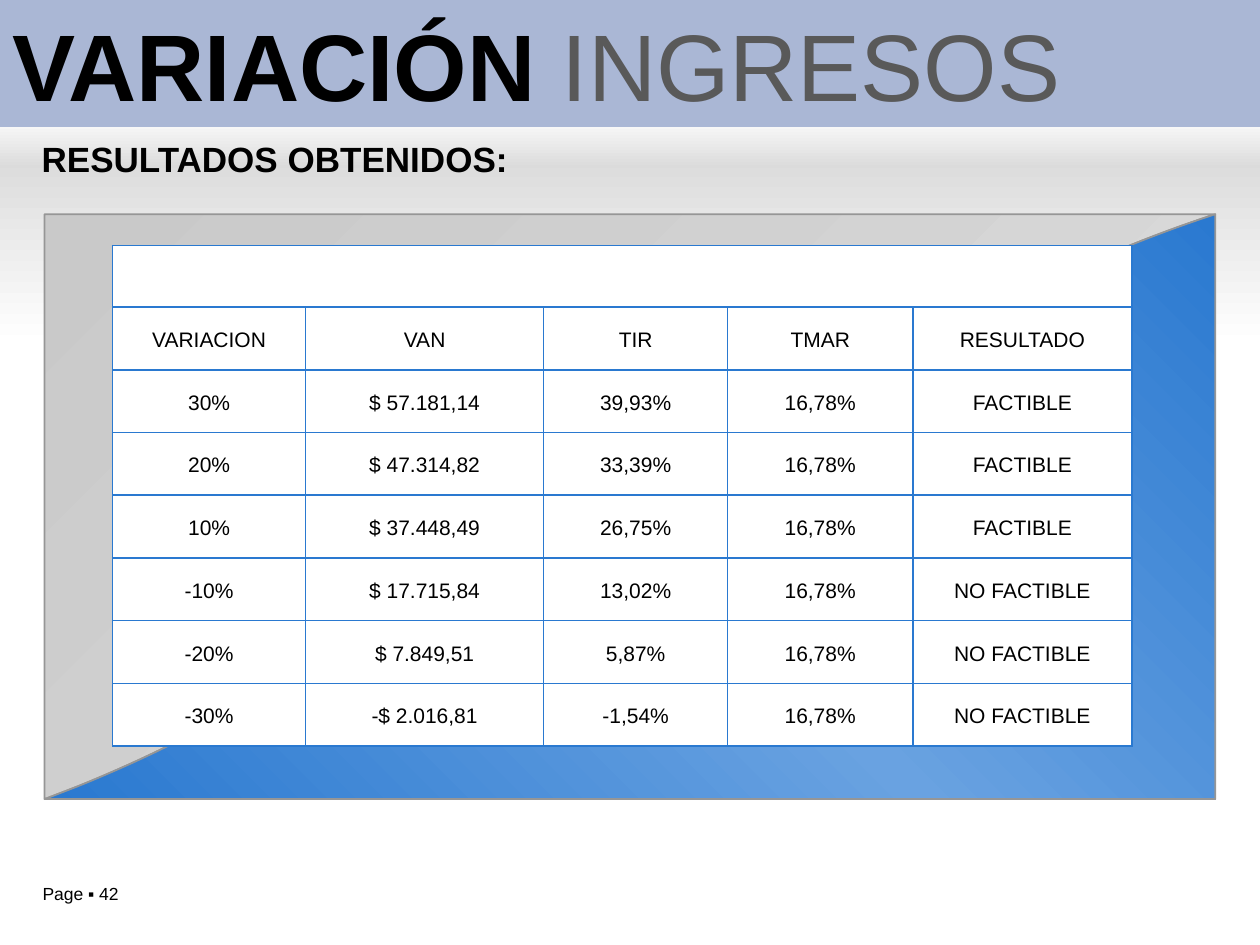
from lxml.etree import SubElement
from pptx import Presentation
from pptx.dml.color import RGBColor
from pptx.enum.shapes import MSO_SHAPE as Preset
from pptx.enum.text import MSO_ANCHOR as Anchor, PP_ALIGN as Align
from pptx.oxml.ns import qn
from pptx.util import Cm, Pt

COLORS = {
    "black": "000000", "white": "FFFFFF", "title band": "AAB7D5", "title gray": "595959",
    "floor": "DDDDDD", "wall": "DBDBDB", "piece dark": "C9C9C9", "piece light": "DEDEDE",
    "piece line": "969696", "blue": "2A79D0", "light blue": "69A2E1",
}


def add_runs(frame, runs, margin_x=0.25, margin_y=0.13):
    frame.word_wrap = True
    frame.vertical_anchor = Anchor.MIDDLE
    frame.margin_left = frame.margin_right = Cm(margin_x)
    frame.margin_top = frame.margin_bottom = Cm(margin_y)
    paragraph = frame.paragraphs[0]
    paragraph.alignment = Align.LEFT
    for text, size, color, bold in runs:
        run = paragraph.add_run()
        run.text = text
        run.font.name = "Arial"
        run.font.size = Pt(size)
        run.font.bold = bold
        run.font.color.rgb = RGBColor.from_string(COLORS[color])


def fill_gradient(shape, names, angle):
    shape.shadow.inherit = False
    shape.fill.gradient()
    gradient = shape._element.spPr.find(qn("a:gradFill"))
    stops = gradient.find(qn("a:gsLst"))
    for stop in list(stops):
        stops.remove(stop)
    for index, name in enumerate(names):
        position = 100000 * index // (len(names) - 1)
        stop = SubElement(stops, qn("a:gs"), pos=str(position))
        SubElement(stop, qn("a:srgbClr"), val=COLORS[name])
    gradient.find(qn("a:lin")).set("ang", str(angle * 60000))


presentation = Presentation()
presentation.slide_width = Cm(25.4)
presentation.slide_height = Cm(19.05)
slide = presentation.slides.add_slide(presentation.slide_layouts[6])
shapes = slide.shapes

page_box = shapes.add_textbox(Cm(0.61), Cm(17.66), Cm(3.73), Cm(0.69))
add_runs(page_box.text_frame, [("Page ▪ 42", 10, "black", False)])

backdrop_group = shapes.add_group_shape()
for top, height, names in [
    (3.35, 3.61, ("floor", "white")),
    (2.29, 1.09, ("white", "wall")),
]:
    backdrop = backdrop_group.shapes.add_shape(
        Preset.RECTANGLE, 0, Cm(top), Cm(25.4), Cm(height)
    )
    fill_gradient(backdrop, names, 90)
    backdrop.line.fill.background()

subtitle = shapes.add_textbox(Cm(0.84), Cm(2.77), Cm(10.49), Cm(0.86))
add_runs(subtitle.text_frame, [("RESULTADOS OBTENIDOS:", 20, "black", True)], 0, 0)

UNIT = Cm(2.54) / 100
LEFT, TOP, RIGHT, BOTTOM = 35, 170, 965, 635
JIGSAW_CURVES = [
    (35, 635, 61, 625, 61, 625), (98, 610, 166, 580, 189, 558),
    (192, 555, 209, 540, 233, 528), (257, 516, 279, 511, 284, 510),
    (299, 507, 311, 516, 313, 520), (318, 526, 318, 536, 318, 540),
    (318, 546, 320, 553, 322, 559), (333, 580, 359, 588, 380, 577),
    (400, 567, 409, 542, 398, 521), (395, 515, 390, 510, 385, 506),
    (382, 504, 374, 498, 372, 491), (371, 486, 370, 473, 381, 462),
    (385, 459, 402, 444, 426, 431), (450, 419, 473, 414, 477, 414),
    (477, 414, 503, 409, 529, 395), (556, 382, 574, 365, 574, 365),
    (585, 355, 584, 340, 583, 337), (581, 329, 573, 323, 570, 321),
    (565, 317, 560, 312, 557, 306), (546, 286, 555, 260, 576, 250),
    (596, 239, 622, 248, 633, 268), (636, 274, 637, 281, 637, 288),
    (637, 291, 637, 301, 642, 307), (643, 309, 645, 311, 646, 312),
    (651, 315, 659, 318, 669, 317), (678, 315, 700, 310, 722, 299),
    (743, 289, 759, 277, 767, 268), (822, 215, 965, 170, 965, 170),
]
edge = [(LEFT, BOTTOM)]
for curve in JIGSAW_CURVES:
    edge += zip(curve[::2], curve[1::2])

for corner, names, angle in [
    ((LEFT, TOP), ("piece dark", "piece light"), 45),
    ((RIGHT, BOTTOM), ("blue", "light blue", "blue"), 315),
]:
    builder = shapes.build_freeform(*corner, scale=UNIT)
    builder.add_line_segments(edge, close=True)
    piece = builder.convert_to_shape()
    piece.left, piece.top, piece.width, piece.height = Cm(0.9), Cm(4.32), Cm(23.6), Cm(11.79)
    outline = piece._element.spPr.find(".//" + qn("a:path"))
    lines = outline.findall(qn("a:lnTo"))[1:len(edge)]
    for start in range(0, len(lines), 3):
        curve = SubElement(outline, qn("a:cubicBezTo"))
        lines[start].addprevious(curve)
        for line in lines[start:start + 3]:
            curve.append(line[0])
            outline.remove(line)
    fill_gradient(piece, names, angle)
    piece.line.color.rgb = RGBColor.from_string(COLORS["piece line"])
    piece.line.width = Pt(1)

TMAR = "16,78%"
ROWS = [
    ("",) * 5,
    ("VARIACION", "VAN", "TIR", "TMAR", "RESULTADO"),
    ("30%", "$ 57.181,14", "39,93%", TMAR, "FACTIBLE"),
    ("20%", "$ 47.314,82", "33,39%", TMAR, "FACTIBLE"),
    ("10%", "$ 37.448,49", "26,75%", TMAR, "FACTIBLE"),
    ("-10%", "$ 17.715,84", "13,02%", TMAR, "NO FACTIBLE"),
    ("-20%", "$ 7.849,51", "5,87%", TMAR, "NO FACTIBLE"),
    ("-30%", "-$ 2.016,81", "-1,54%", TMAR, "NO FACTIBLE"),
]
WIDTHS = [3.89, 4.8, 3.71, 3.73, 4.42]
HEAD_HEIGHT = Cm(1.24)
BODY_HEIGHT = Cm(8.85) // (len(ROWS) - 1)
table = shapes.add_table(
    len(ROWS), len(WIDTHS), Cm(2.27), Cm(4.95), Cm(sum(WIDTHS)), Cm(10.09)
).table
table.first_row = table.horz_banding = False
for column, width in zip(table.columns, WIDTHS):
    column.width = Cm(width)
for row, texts in zip(table.rows, ROWS):
    row.height = BODY_HEIGHT if texts[0] else HEAD_HEIGHT
    for cell, text in zip(row.cells, texts):
        properties = cell._tc.get_or_add_tcPr()
        for side in ("a:lnL", "a:lnR", "a:lnT", "a:lnB"):
            border = SubElement(properties, qn(side), w=str(Pt(1)))
            border_fill = SubElement(border, qn("a:solidFill"))
            SubElement(border_fill, qn("a:srgbClr"), val=COLORS["blue"])
        cell.fill.solid()
        cell.fill.fore_color.rgb = RGBColor.from_string(COLORS["white"])
        if text:
            add_runs(cell.text_frame, [(text, 12, "black", False)], 0.13, 0)
            cell.vertical_anchor = Anchor.MIDDLE
            cell.margin_left = cell.margin_right = Cm(0.13)
            cell.margin_top = cell.margin_bottom = 0
            paragraph = cell.text_frame.paragraphs[0]
            paragraph.alignment = Align.CENTER
            paragraph.line_spacing = 1.15
            paragraph.space_after = Pt(10)
table.cell(0, 0).merge(table.cell(0, len(WIDTHS) - 1))

title = shapes.add_shape(Preset.RECTANGLE, 0, 0, Cm(25.4), Cm(2.56))
title.shadow.inherit = False
title.fill.solid()
title.fill.fore_color.rgb = RGBColor.from_string(COLORS["title band"])
title.line.fill.background()
add_runs(title.text_frame, [
    ("VARIACIÓN ", 54, "black", True),
    ("INGRESOS", 54, "title gray", False),
])

presentation.save("out.pptx")
